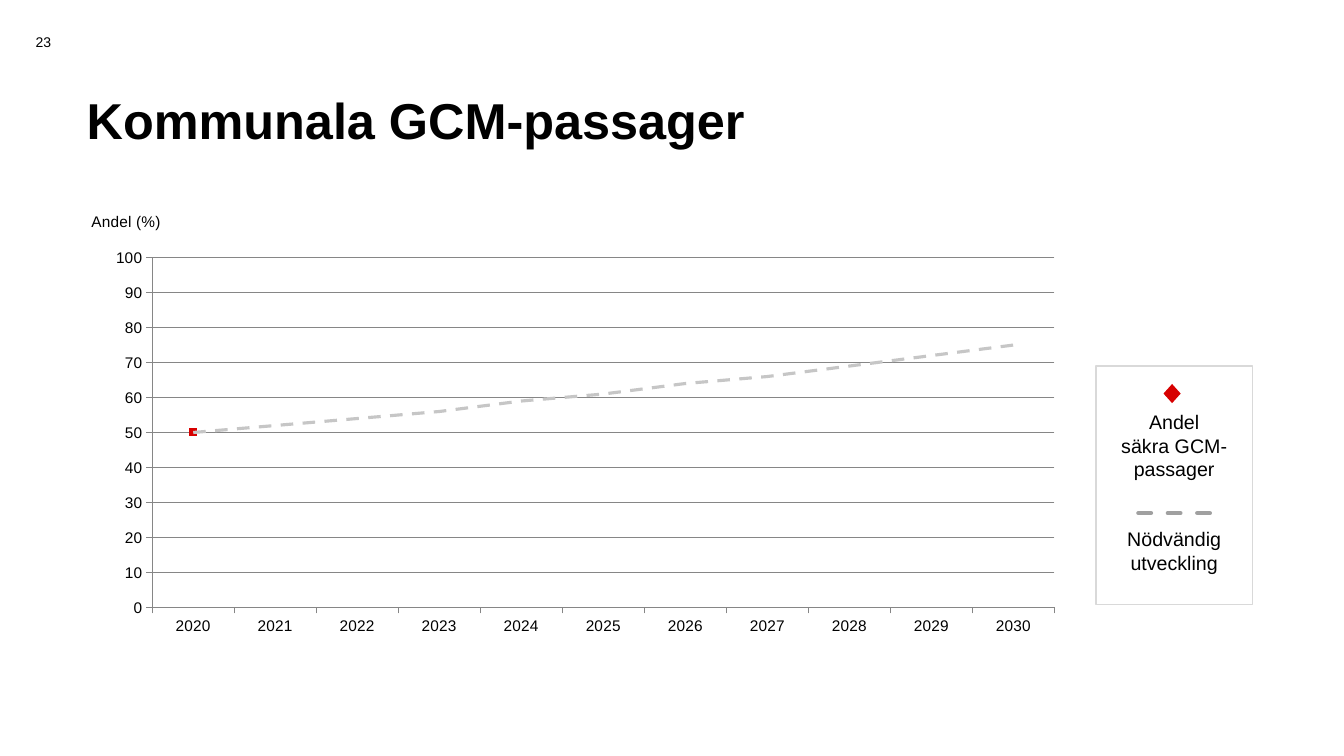
from lxml import etree
from pptx import Presentation, util as u
from pptx.chart.data import CategoryChartData
from pptx.dml.color import RGBColor
from pptx.enum import chart as ch, dml, shapes, text
from pptx.oxml import parse_xml
from pptx.oxml.ns import nsdecls, qn

TITLE = "Kommunala GCM-passager"
PAGE = "23"
KEYS = ["Andel\vsäkra GCM-\vpassager", "Nödvändig\vutveckling"]
AXIS = "Andel (%)"
YEARS = [str(year) for year in range(2020, 2031)]
SAFE = [50] + [None] * 10
NEED = [50, 52, 54, 56, 59, 61, 64, 66, 69, 72, 75]
COLORS = {"ink": "000000", "paper": "FFFFFF", "edge": "D9D9D9", "red": "D70000",
          "dash": "A0A0A0", "need": "C6C6C6", "grid": "868686"}
FONT = "Arial"
WIDE, HIGH = u.Inches(13.33), u.Inches(7.5)
SPOTS = {
    "title": (5.7, 13.2, 88.6, 6.27),
    "page": (0, 2.93, 6.45, 5.33),
    "chart": (5.4, 26.8, 75.09, 66.27),
    "card": (81.55, 48.4, 11.63, 31.6),
    "keys": (82.15, 53.6, 10.43, 23.2),
    "mark": (86.57, 50.8, 1.28, 2.53),
    "dash": (84.7, 67.87, 90.02, 67.87),
}
PLOT = {"x": 7.9, "y": 11, "w": 89.4, "h": 69.8}
LABEL = {"x": 1.6, "y": 1.2}


def spot(name):
    return [int(share * side / 100) for share, side in zip(SPOTS[name], (WIDE, HIGH) * 2)]


def color(name):
    return RGBColor.from_string(COLORS[name])


def style(font, size, bold=False):
    font.name, font.size, font.bold = FONT, u.Pt(size), bold
    font.color.rgb = color("ink")


def stroke(line, name, width, dash=None):
    line.color.rgb = color(name)
    line.width = u.Pt(width)
    if dash:
        line.dash_style = dash


def write(frame, lines, size, align, bold=False):
    frame.word_wrap = True
    frame.text = "\n".join(lines)
    for para in frame.paragraphs:
        para.alignment = align
        for run in para.runs:
            style(run.font, size, bold)


def block(group, kind, name, fill):
    shape = group.shapes.add_shape(kind, *spot(name))
    shape.shadow.inherit = False
    shape.fill.solid()
    shape.fill.fore_color.rgb = color(fill)
    shape.line.fill.background()
    return shape


def layout(parts, inner=False):
    target = '<c:layoutTarget val="inner"/>' if inner else ""
    modes = "".join(f'<c:{key}Mode val="edge"/>' for key in "xy")
    sizes = "".join(f'<c:{key} val="{val / 100:.3f}"/>' for key, val in parts.items())
    return parse_xml(f'<c:layout {nsdecls("c")}><c:manualLayout>{target}{modes}{sizes}'
                     '</c:manualLayout></c:layout>')


def place(owner, new, index):
    for old in owner.findall(qn("c:layout")):
        owner.remove(old)
    owner.insert(index, new)


def draw_chart(slide):
    data = CategoryChartData(number_format="0")
    data.categories = YEARS
    data.add_series("Series 1", SAFE)
    data.add_series("Series 2", NEED)
    chart = slide.shapes.add_chart(ch.XL_CHART_TYPE.LINE_MARKERS, *spot("chart"), data).chart
    chart.has_legend = chart.has_title = False
    style(chart.font, 11)
    for axis in (chart.category_axis, chart.value_axis):
        axis.major_tick_mark = ch.XL_TICK_MARK.OUTSIDE
        axis.minor_tick_mark = ch.XL_TICK_MARK.NONE
        style(axis.tick_labels.font, 11)
        stroke(axis.format.line, "grid", 0.75)

    axis = chart.value_axis
    axis.minimum_scale, axis.maximum_scale, axis.major_unit = 0, 100, 10
    axis.tick_labels.number_format = "0"
    axis.tick_labels.number_format_is_linked = False
    axis.has_major_gridlines = True
    stroke(axis.major_gridlines.format.line, "grid", 0.75)
    frame = axis.axis_title.text_frame
    frame.text = AXIS
    style(frame.paragraphs[0].runs[0].font, 11)
    body = axis.axis_title._element.find(".//" + qn("a:bodyPr"))
    body.set("rot", "0")
    body.set("vert", "horz")
    place(axis.axis_title._element, layout(LABEL), 1)
    place(chart._chartSpace.chart.plotArea, layout(PLOT, True), 0)

    safe, need = chart.plots[0].series
    safe.smooth = need.smooth = False
    safe.format.line.fill.background()
    safe.marker.style, safe.marker.size = ch.XL_MARKER_STYLE.SQUARE, 5
    safe.marker.format.fill.solid()
    safe.marker.format.fill.fore_color.rgb = color("red")
    safe.marker.format.line.fill.background()
    need.marker.style = ch.XL_MARKER_STYLE.NONE
    stroke(need.format.line, "need", 2.25, dml.MSO_LINE.DASH)


def draw_keys(slide):
    group = slide.shapes.add_group_shape()
    card = block(group, shapes.MSO_SHAPE.RECTANGLE, "card", "paper")
    stroke(card.line, "edge", 1)
    box = group.shapes.add_textbox(*spot("keys"))
    write(box.text_frame, KEYS, 14, text.PP_ALIGN.CENTER)
    box.text_frame.auto_size = text.MSO_AUTO_SIZE.SHAPE_TO_FIT_TEXT
    for para in box.text_frame.paragraphs:
        para.space_before = u.Pt(33)
    dash = group.shapes.add_connector(shapes.MSO_CONNECTOR.STRAIGHT, *spot("dash"))
    stroke(dash.line, "dash", 3, dml.MSO_LINE.DASH)
    dash.line._ln.set("cap", "rnd")
    etree.SubElement(dash._element.spPr, qn("a:effectLst"))
    block(group, shapes.MSO_SHAPE.DIAMOND, "mark", "red")


def main():
    deck = Presentation()
    deck.slide_width, deck.slide_height = WIDE, HIGH
    slide = deck.slides.add_slide(deck.slide_layouts[5])
    title = slide.shapes.title
    title.left, title.top, title.width, title.height = spot("title")
    write(title.text_frame, [TITLE], 36, text.PP_ALIGN.LEFT, True)
    title.text_frame.paragraphs[0].line_spacing = 0.9
    page = slide.shapes.add_textbox(*spot("page"))
    write(page.text_frame, [PAGE], 10, text.PP_ALIGN.CENTER)
    for shape in (title, page):
        shape.text_frame.vertical_anchor = text.MSO_ANCHOR.MIDDLE
    draw_keys(slide)
    draw_chart(slide)
    deck.save("out.pptx")


if __name__ == "__main__":
    main()
